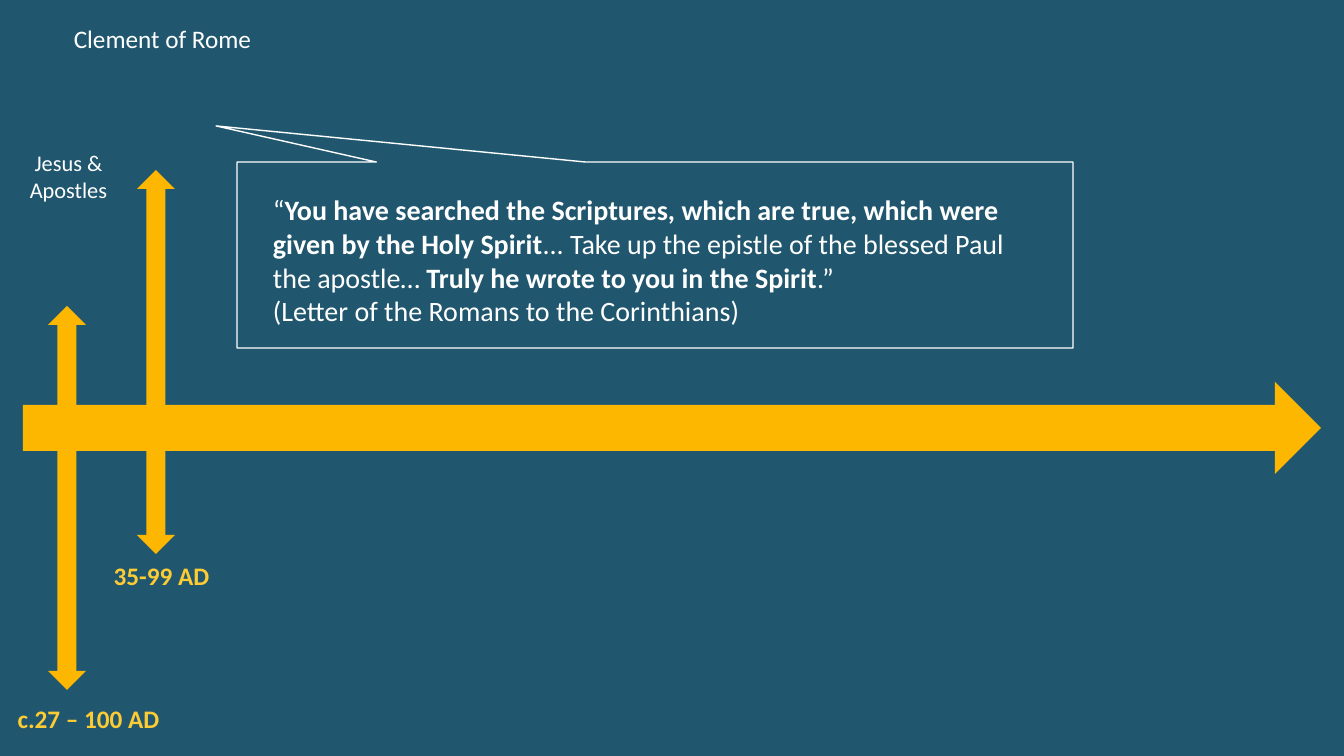
from pptx import Presentation
from pptx import util as u
from pptx.dml.color import RGBColor
from pptx.enum import shapes, text

PX = 914400 / 100.8
TEAL, GOLD, YELLOW, WHITE = "20576E", "FEB700", "FDCB34", "FFFFFF"
KIND = shapes.MSO_SHAPE


def add_shape(kind, area, fill):
    shape = page.shapes.add_shape(kind, *[round(n * PX) for n in area])
    shape.shadow.inherit = False
    shape.fill.solid()
    shape.fill.fore_color.rgb = RGBColor.from_string(fill)
    shape.line.fill.background()
    return shape


def add_text(area, lines, size, color, align, wrap):
    """Write lines of (words, bold) runs as one paragraph with line breaks."""
    box = page.shapes.add_textbox(*[round(n * PX) for n in area])
    box.text_frame.word_wrap = wrap
    box.text_frame.auto_size = text.MSO_AUTO_SIZE.SHAPE_TO_FIT_TEXT
    para = box.text_frame.paragraphs[0]
    para.alignment = align
    for number, line in enumerate(lines):
        if number:
            para.add_line_break()
        for words, bold in line:
            span = para.add_run()
            span.text = words
            span.font.name = "Calibri"
            span.font.size = u.Pt(size)
            span.font.bold = bold
            span.font.color.rgb = RGBColor.from_string(color)


deck = Presentation()
deck.slide_width = round(1344 * PX)
deck.slide_height = round(756 * PX)
page = deck.slides.add_slide(deck.slide_layouts[6])
page.background.fill.solid()
page.background.fill.fore_color.rgb = RGBColor.from_string(TEAL)

callout = add_shape(KIND.RECTANGULAR_CALLOUT, (237, 162, 836, 186), TEAL)
callout.adjustments[0] = -0.525
callout.adjustments[1] = -0.694
callout.line.color.rgb = RGBColor.from_string(WHITE)
callout.line.width = u.Pt(1)

# Life spans, then the timeline across them
for left, top in [(48, 306), (137, 170)]:
    add_shape(KIND.UP_DOWN_ARROW, (left, top, 38, 384), GOLD)
add_shape(KIND.RIGHT_ARROW, (23, 382, 1298, 92), GOLD)

labels = [
    ((63, 18, 199, 40), "Clement of Rome", 18, WHITE, False, False),
    ((95, 555, 133, 40), "35-99 AD", 18, YELLOW, True, False),
    ((0, 698, 177, 40), "c.27 – 100 AD", 18, YELLOW, True, False),
    ((7, 144, 123, 65), "Jesus & Apostles", 16, WHITE, False, True),
]
for area, words, size, color, bold, wrap in labels:
    add_text(area, [[(words, bold)]], size, color, text.PP_ALIGN.CENTER, wrap)

quote = [
    [
        ("“", False),
        ("You have searched the Scriptures, which are true, which were given by the Holy Spirit", True),
        ("... Take up the epistle of the blessed Paul the apostle… ", False),
        ("Truly he wrote to you in the Spirit", True),
        (".”", False),
    ],
    [("(Letter of the Romans to the Corinthians)", False)],
]
add_text((263, 188, 772, 146), quote, 20, WHITE, text.PP_ALIGN.LEFT, True)

deck.save("out.pptx")
